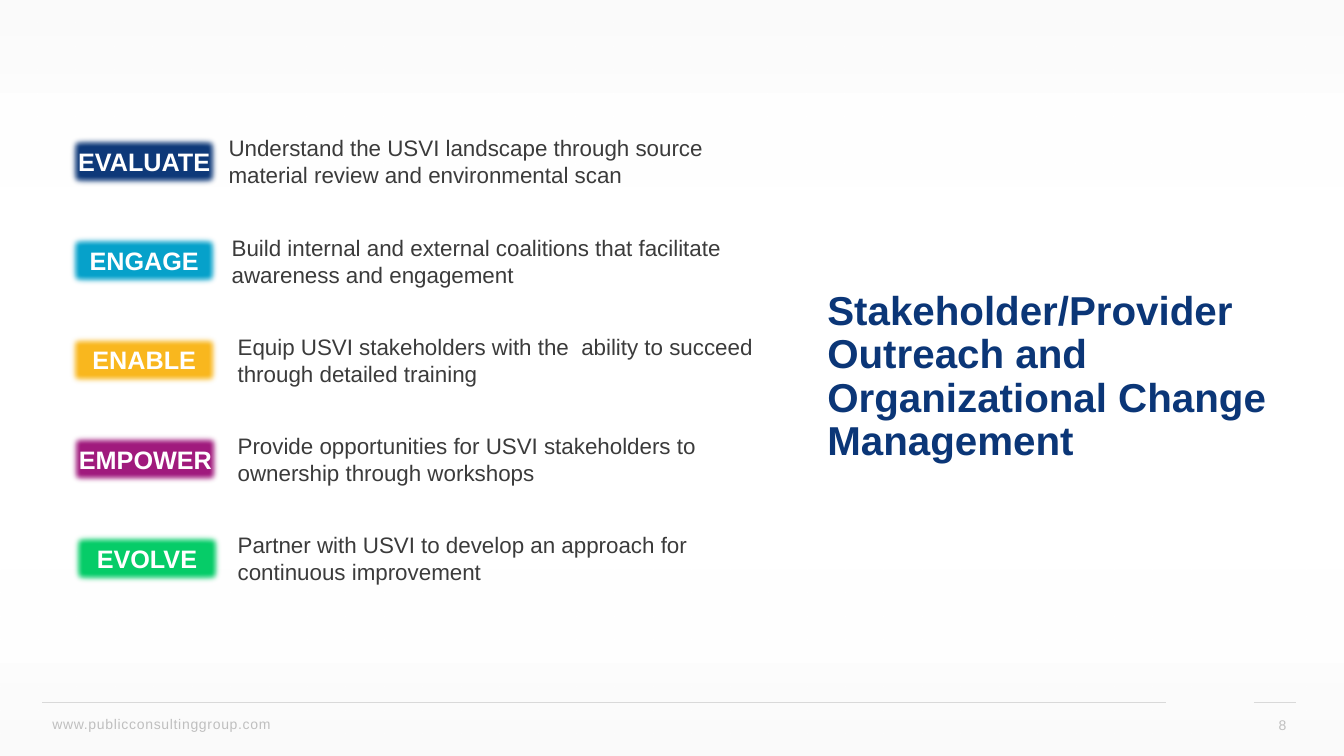
from lxml.etree import SubElement
from pptx import Presentation
from pptx.dml.color import RGBColor
from pptx.enum.shapes import MSO_CONNECTOR, MSO_SHAPE
from pptx.enum.text import MSO_ANCHOR, PP_ALIGN
from pptx.oxml.ns import qn
from pptx.util import Cm, Pt

COLORS = {
    "navy": "0B3677",
    "cyan": "00A0CA",
    "amber": "FAB81F",
    "plum": "A11B7E",
    "green": "00CC66",
    "white": "FFFFFF",
    "body": "3B3B3B",
    "footer": "BFBFBF",
    "rule": "D9D9D9",
    "haze": "FBFBFB",
}
PAGE_WIDTH, PAGE_HEIGHT = 33.87, 19.05
ROW_PITCH, ROW_HEIGHT = 2.5, 1.4
TAG_WIDTH, DESCRIPTION_WIDTH = 3.91, 14.17
# label, colour, opacity in percent, tag left, description left, description
STEPS = [
    ("EVALUATE", "navy", 98, 0, 3.83,
     "Understand the USVI landscape through source material review and environmental scan"),
    ("ENGAGE", "cyan", 98, 0, 3.91,
     "Build internal and external coalitions that facilitate awareness and engagement"),
    ("ENABLE", "amber", 100, 0, 4.06,
     "Equip USVI stakeholders with the  ability to succeed through detailed training"),
    ("EMPOWER", "plum", 100, 0.03, 4.06,
     "Provide opportunities for USVI stakeholders to ownership through workshops"),
    ("EVOLVE", "green", 98, 0.07, 4.06,
     "Partner with USVI to develop an approach for continuous improvement"),
]


def rgb(name):
    return RGBColor.from_string(COLORS[name])


def set_opacity(color_parent, percent):
    color = color_parent.find(qn("a:srgbClr"))
    SubElement(color, qn("a:alpha")).set("val", str(percent * 1000))


def write(box, text, size, color, bold=False, align=PP_ALIGN.LEFT, anchor=MSO_ANCHOR.MIDDLE):
    """Fill a shape or text box with one wrapped paragraph and return it."""
    frame = box.text_frame
    frame.word_wrap = True
    frame.vertical_anchor = anchor
    para = frame.paragraphs[0]
    para.text = text
    para.alignment = align
    para.font.name = "Arial"
    para.font.size = Pt(size)
    para.font.bold = bold
    para.font.color.rgb = rgb(color)
    return para


def add_text(page, left, top, width, height, *args, **kwargs):
    box = page.shapes.add_textbox(Cm(left), Cm(top), Cm(width), Cm(height))
    return write(box, *args, **kwargs)


def add_rectangle(page, left, top, width, height):
    box = page.shapes.add_shape(
        MSO_SHAPE.RECTANGLE, Cm(left), Cm(top), Cm(width), Cm(height))
    box.shadow.inherit = False
    box.line.fill.background()
    return box


def add_panel(page, left, top, width, color, opacity):
    box = add_rectangle(page, left, top, width, ROW_HEIGHT)
    box.fill.solid()
    box.fill.fore_color.rgb = rgb(color)
    if opacity < 100:
        set_opacity(box._element.spPr.find(qn("a:solidFill")), opacity)
    return box


def soften_edges(box):
    effects = box._element.spPr.find(qn("a:effectLst"))
    SubElement(effects, qn("a:softEdge")).set("rad", str(Pt(5)))


def add_haze(page, top, height, rotation):
    """Add a full-width band that fades from light grey to clear."""
    band = add_rectangle(page, 0, top, PAGE_WIDTH, height)
    band.rotation = rotation
    band.fill.gradient()
    band.fill.gradient_angle = 270
    for stop, color, position in zip(band.fill.gradient_stops, ("haze", "white"), (0, 1)):
        stop.color.rgb = rgb(color)
        stop.position = position
    set_opacity(band._element.spPr.findall(".//" + qn("a:gs"))[-1], 0)


def add_rule(page, left, top, width):
    rule = page.shapes.add_connector(
        MSO_CONNECTOR.STRAIGHT, Cm(left), Cm(top), Cm(left + width), Cm(top))
    rule.line.color.rgb = rgb("rule")
    rule.line.width = Pt(0.5)
    SubElement(rule._element.spPr, qn("a:effectLst"))


def add_footer(page, left, top, width):
    number_width = 1.07
    number_left = left + width - number_width
    add_rule(page, left, top, 28.32)
    add_rule(page, number_left, top, number_width)
    address = add_text(page, left, top + 0.2, 9.83, 0.71, "www.publicconsultinggroup.com",
                       10, "footer", anchor=MSO_ANCHOR.TOP)
    number = add_text(page, number_left, top + 0.05, number_width, 1.02, "8",
                      10, "footer", align=PP_ALIGN.RIGHT)
    number.space_after = Pt(6)
    for para in (address, number):
        para.runs[0].font._element.set("spc", "50")


def add_title(page, left, top, width, height):
    para = add_text(page, left, top, width, height,
                    "Stakeholder/Provider Outreach and Organizational Change Management",
                    28.8, "navy", bold=True)
    para.line_spacing = 0.9


def add_steps(page, left, top):
    for row, (label, color, opacity, tag_left, text_left, text) in enumerate(STEPS):
        row_top = top + row * ROW_PITCH
        tag = add_panel(page, left + tag_left, row_top, TAG_WIDTH, color, opacity)
        soften_edges(tag)
        write(tag, label, 18, "white", bold=True, align=PP_ALIGN.CENTER)
        description = add_panel(
            page, left + text_left, row_top, DESCRIPTION_WIDTH, "white", opacity)
        write(description, text, 16, "body")


def main():
    deck = Presentation()
    deck.slide_width, deck.slide_height = Cm(PAGE_WIDTH), Cm(PAGE_HEIGHT)
    page = deck.slides.add_slide(deck.slide_layouts[6])
    haze_height = 4.7
    add_haze(page, 0, haze_height, 0)
    add_haze(page, PAGE_HEIGHT - haze_height, haze_height, 180)
    add_footer(page, 1.07, 17.7, 31.6)
    add_title(page, 20.6, 7.92, 12.14, 3.18)
    add_steps(page, 1.68, 3.37)
    deck.save("out.pptx")


if __name__ == "__main__":
    main()
